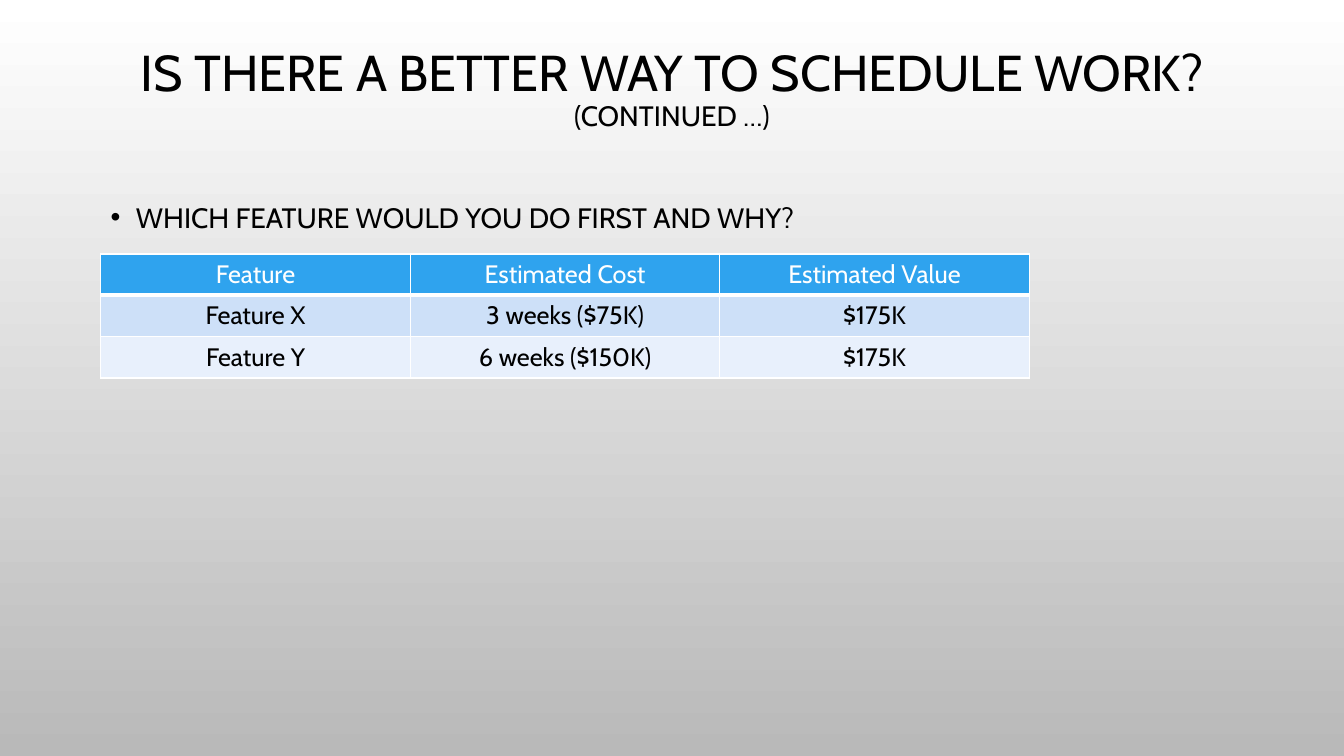
import pptx
import pptx.dml.color
import pptx.enum.text
import pptx.oxml
import pptx.oxml.ns
import pptx.util
from pptx.util import Inches

ALIGN = pptx.enum.text.PP_ALIGN
ANCHOR = pptx.enum.text.MSO_ANCHOR
NAMESPACE = pptx.oxml.ns.nsdecls("a")


def color(value):
    return pptx.dml.color.RGBColor.from_string(value)


def apply(target, formats):
    for name, value in formats.items():
        setattr(target, name, value)


class SlideBuilder:
    font_name = "Cabin"
    black, white = "000000", "FFFFFF"

    def __init__(self, presentation):
        self.slide = presentation.slides.add_slide(presentation.slide_layouts[6])

    def background(self, top, bottom):
        fill = self.slide.background.fill
        fill.gradient()
        fill.gradient_angle = 270
        for stop, value in zip(fill.gradient_stops, (top, bottom)):
            stop.color.rgb = color(value)

    def run(self, paragraph, text, size, font_color):
        run = paragraph.add_run()
        run.text = text
        apply(run.font, {"name": self.font_name, "size": pptx.util.Pt(size)})
        run.font.color.rgb = color(font_color)

    def text(self, box, lines, frame_format, paragraph_format, bullet=False):
        shape = self.slide.shapes.add_textbox(*map(Inches, box))
        apply(shape.text_frame, {"word_wrap": True, **frame_format})
        paragraph = shape.text_frame.paragraphs[0]
        apply(paragraph, paragraph_format)
        if bullet:
            self.bullet(paragraph)
        for index, (text, size) in enumerate(lines):
            if index:
                paragraph.add_line_break()
            self.run(paragraph, text, size, self.black)

    def bullet(self, paragraph):
        properties = paragraph._p.get_or_add_pPr()
        apply_indent = {"marL": Inches(0.25), "indent": -Inches(0.25)}
        for name, value in apply_indent.items():
            properties.set(name, str(value))
        for xml in (
            f'<a:buClr {NAMESPACE}><a:srgbClr val="{self.black}"/></a:buClr>',
            f'<a:buFont {NAMESPACE} typeface="Arial"/>',
            f'<a:buChar {NAMESPACE} char="•"/>',
        ):
            properties.append(pptx.oxml.parse_xml(xml))

    def borders(self, cell, widths):
        properties = cell._tc.get_or_add_tcPr()
        for index, (side, width) in enumerate(widths.items()):
            properties.insert(index, pptx.oxml.parse_xml(
                f'<a:ln{side} {NAMESPACE} w="{pptx.util.Pt(width)}"><a:solidFill>'
                f'<a:srgbClr val="{self.white}"/></a:solidFill></a:ln{side}>'))

    def table(self, left, top, column_width, row_height, rows, fills):
        row_count, column_count = len(rows), len(rows[0])
        table = self.slide.shapes.add_table(
            row_count, column_count, Inches(left), Inches(top),
            Inches(column_width * column_count), Inches(row_height * row_count)).table
        for row_index, (values, fill) in enumerate(zip(rows, fills)):
            is_header = row_index == 0
            for column_index, value in enumerate(values):
                cell = table.cell(row_index, column_index)
                cell.fill.solid()
                cell.fill.fore_color.rgb = color(fill)
                self.borders(cell, {"L": 1, "R": 1, "T": 1, "B": 3 if is_header else 1})
                paragraph = cell.text_frame.paragraphs[0]
                paragraph.alignment = ALIGN.CENTER
                self.run(paragraph, value, 18, self.white if is_header else self.black)


def main():
    presentation = pptx.Presentation()
    apply(presentation, {"slide_width": Inches(13.33), "slide_height": Inches(7.5)})
    builder = SlideBuilder(presentation)
    builder.background("FFFFFF", "B9B9B9")

    # Title
    builder.text(
        (1, 0.02, 11.33, 1.75),
        [("IS THERE A BETTER WAY TO SCHEDULE WORK?", 36), ("(CONTINUED …)", 20)],
        {"vertical_anchor": ANCHOR.MIDDLE},
        {"alignment": ALIGN.CENTER, "line_spacing": 0.9})

    # Question
    builder.text(
        (1, 1.87, 11.33, 4.46),
        [("WHICH FEATURE WOULD YOU DO FIRST AND WHY?", 20)],
        {"vertical_anchor": ANCHOR.TOP},
        {"line_spacing": 1.2}, bullet=True)

    # Feature comparison
    builder.table(
        1, 2.52, 3.07, 0.41,
        [("Feature", "Estimated Cost", "Estimated Value"),
         ("Feature X", "3 weeks ($75K)", "$175K"),
         ("Feature Y", "6 weeks ($150K)", "$175K")],
        ("2FA3EE", "CDE0F8", "E8F0FC"))

    presentation.save("out.pptx")


if __name__ == "__main__":
    main()
